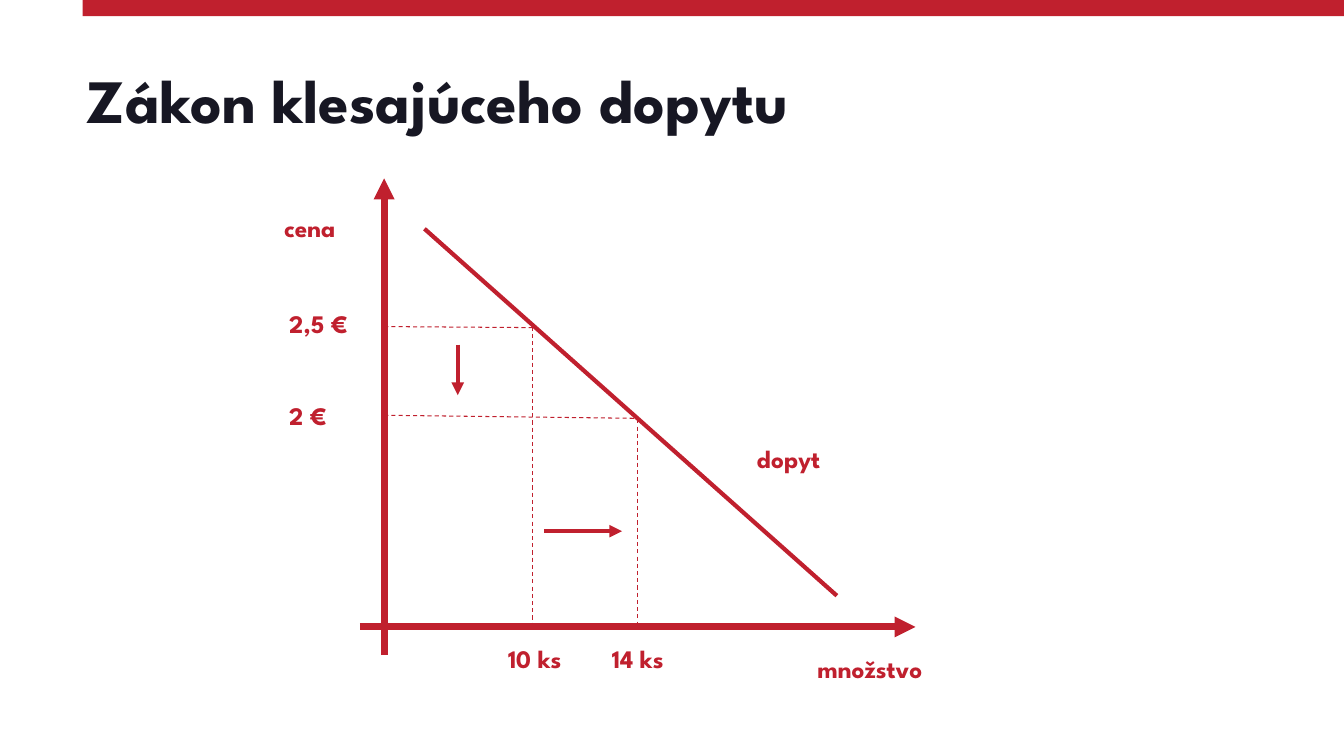
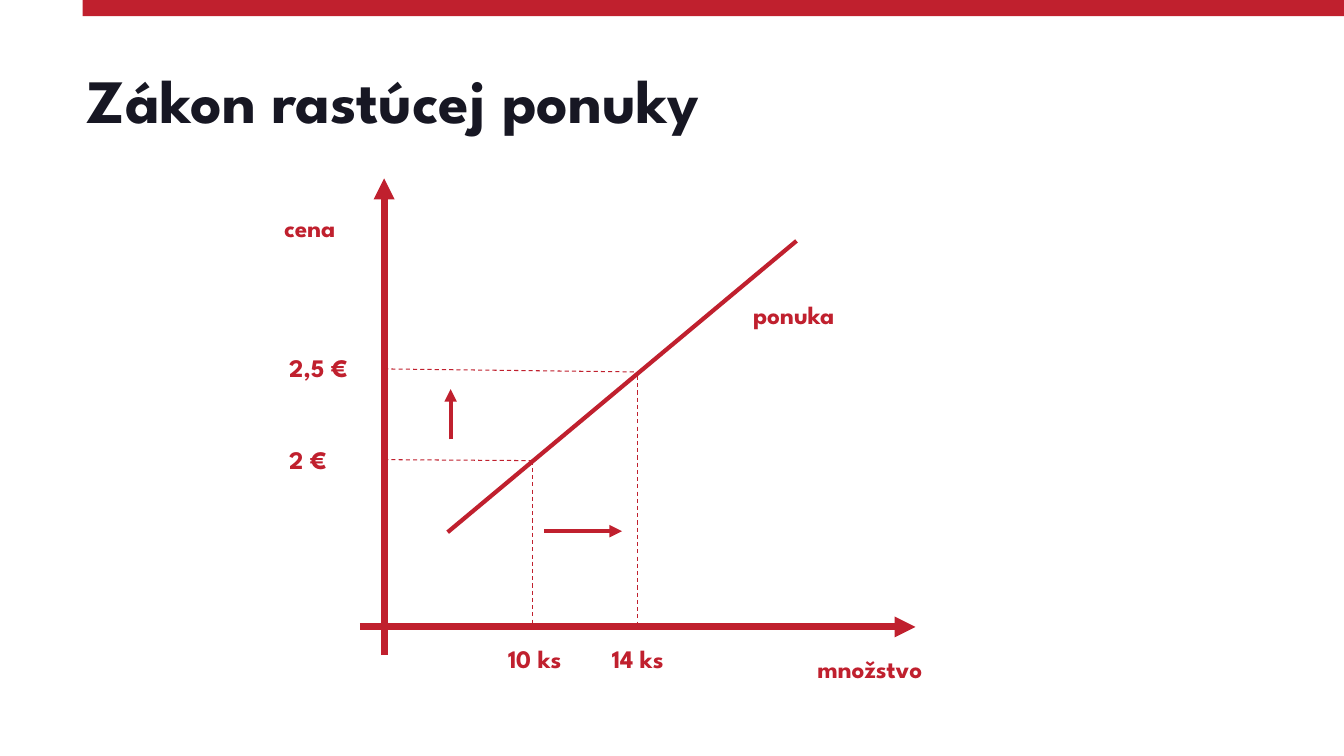
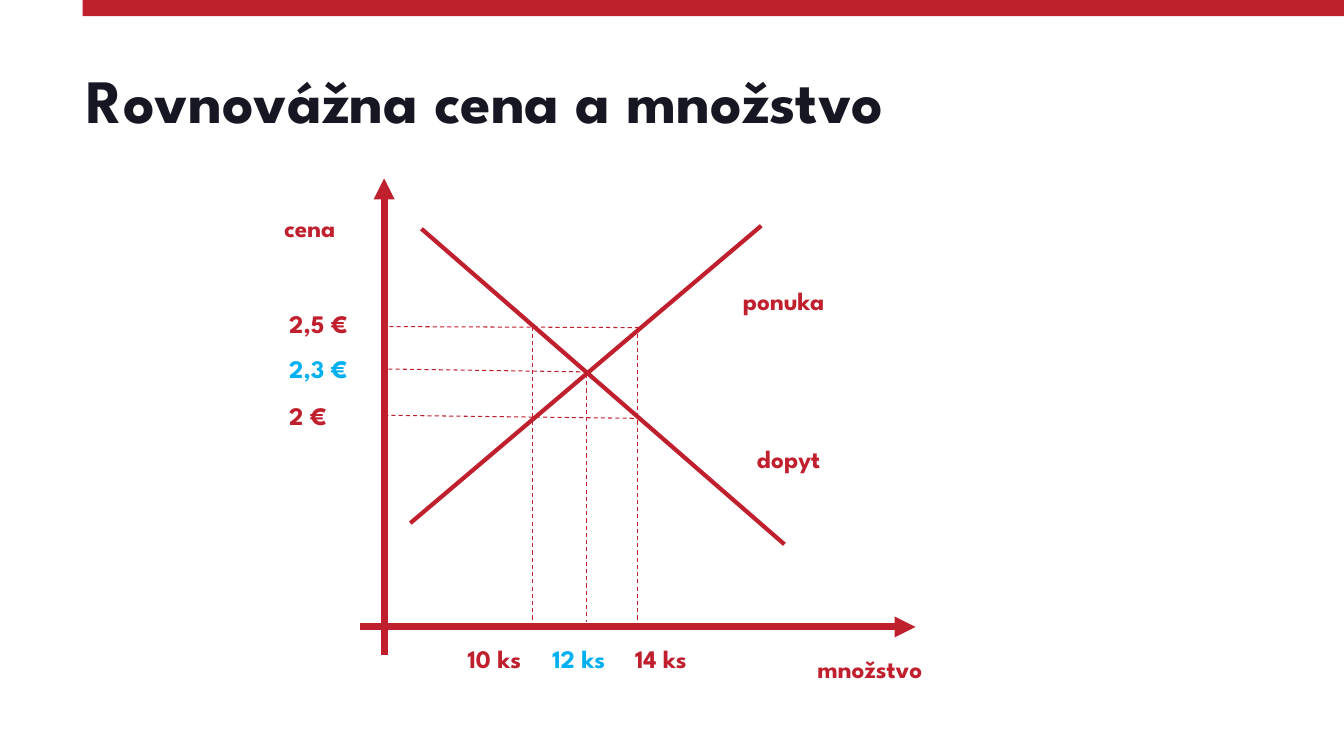
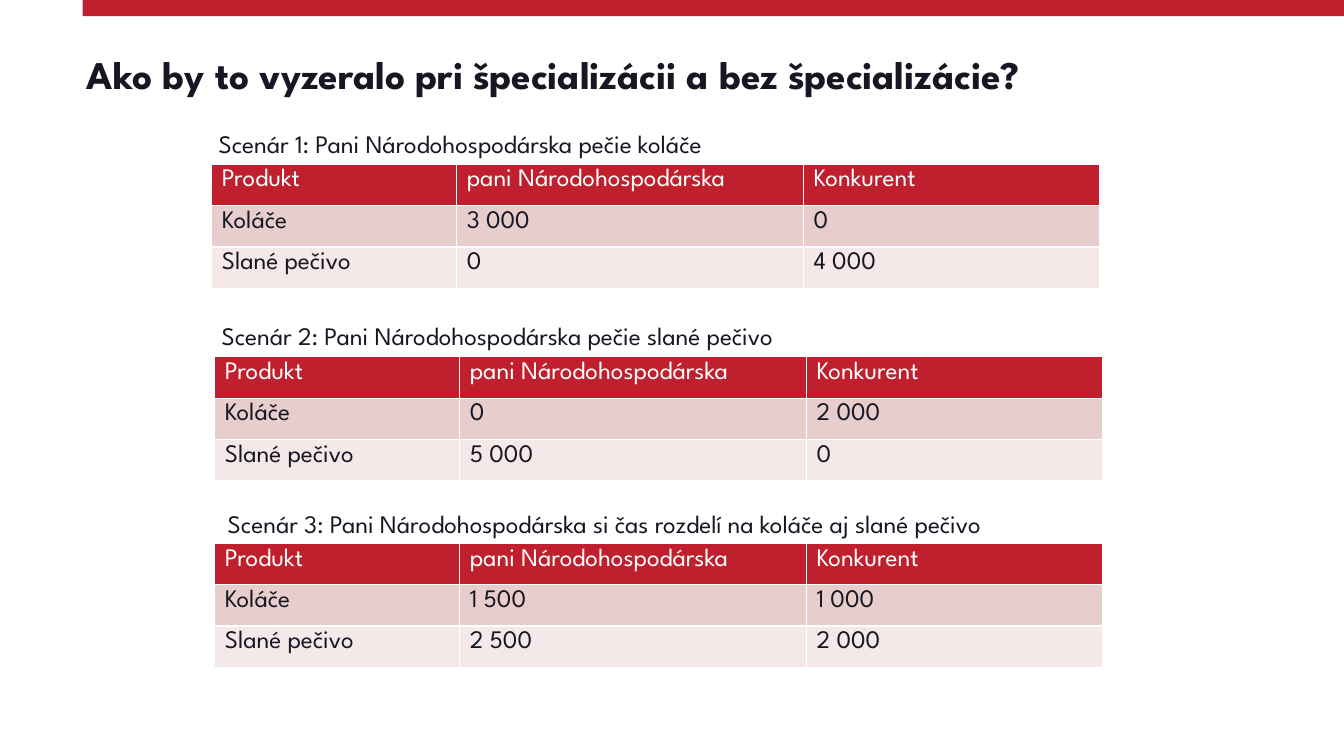
import pptx
import pptx.util
import pptx.dml.color
import pptx.enum.dml
import pptx.enum.shapes
import pptx.enum.text
import pptx.oxml.ns
import lxml.etree

PX = 9144
FONT = "League Spartan"
RED, INK, BLUE, WHITE = "C0202E", "171723", "00B0F0", "FFFFFF"
ROW_FILLS = [RED, "E8CDCD", "F4E8E8"]
color = pptx.dml.color.RGBColor.from_string
qn = pptx.oxml.ns.qn


def write(tf, text, size, ink, bold):
    tf.text = text
    p = tf.paragraphs[0]
    p.alignment = pptx.enum.text.PP_ALIGN.LEFT
    f = p.runs[0].font
    f.name, f.size, f.bold = FONT, pptx.util.Pt(size), bold
    f.color.rgb = color(ink)


def add_line(s, ends, width, dashed=False, arrow=False):
    straight = pptx.enum.shapes.MSO_CONNECTOR.STRAIGHT
    cx = s.shapes.add_connector(straight, *[v * PX for v in ends])
    cx.line.color.rgb = color(RED)
    cx.line.width = pptx.util.Pt(width)
    if dashed:
        cx.line.dash_style = pptx.enum.dml.MSO_LINE.DASH
    sp_pr = cx.element.spPr
    if arrow:
        lxml.etree.SubElement(sp_pr.find(qn("a:ln")), qn("a:tailEnd"), type="triangle")
    lxml.etree.SubElement(sp_pr, qn("a:effectLst"))


prs = pptx.Presentation()
prs.slide_width, prs.slide_height = 1333 * PX, 750 * PX
layout = prs.slide_layouts.get_by_name("Title Only")

titles = [
    ("Zákon klesajúceho dopytu", 44, 145),
    ("Zákon rastúcej ponuky", 44, 145),
    ("Rovnovážna cena a množstvo", 44, 145),
    ("Ako by to vyzeralo pri špecializácii a bez špecializácie?", 28, 92),
]
slides = []
for title, size, height in titles:
    s = prs.slides.add_slide(layout)
    sp = s.shapes.title
    sp.left, sp.top, sp.width, sp.height = 76 * PX, 30 * PX, 1150 * PX, height * PX
    tf = sp.text_frame
    write(tf, title, size, INK, True)
    tf.paragraphs[0].line_spacing = 0.9
    tf.vertical_anchor = pptx.enum.text.MSO_ANCHOR.MIDDLE
    tf.auto_size = pptx.enum.text.MSO_AUTO_SIZE.NONE
    slides.append(s)

band = slides[0].shapes.add_shape(
    pptx.enum.shapes.MSO_SHAPE.RECTANGLE, 82 * PX, 0, 1251 * PX, 16 * PX)
band.shadow.inherit = False
band.fill.solid()
band.fill.fore_color.rgb = color(RED)
band.line.fill.background()
layout.shapes.element.insert(2, band.element)

axes = [(357, 622, 908, 622), (381, 650, 381, 177)]
axis_labels = [("cena", 272, 206, 89, RED), ("množstvo", 801, 643, 136, RED)]
graphs = [
    {
        "curves": [(421, 227, 830, 591)],
        "guides": [(381, 324, 528, 325), (528, 324, 528, 622),
                   (632, 416, 632, 620), (381, 412, 631, 415)],
        "arrows": [(454, 342, 454, 392), (540, 527, 617, 527)],
        "labels": [("dopyt", 741, 435, 107, RED),
                   ("2,5 €", 277, 301, 89, RED), ("2 €", 277, 392, 89, RED),
                   ("10 ks", 494, 633, 89, RED), ("14 ks", 597, 633, 89, RED)],
    },
    {
        "curves": [(790, 239, 444, 528)],
        "guides": [(381, 456, 528, 457), (528, 457, 528, 619),
                   (632, 373, 632, 619), (381, 366, 631, 369)],
        "arrows": [(447, 436, 447, 386), (540, 527, 617, 527)],
        "labels": [("ponuka", 737, 292, 129, RED),
                   ("2,5 €", 277, 345, 89, RED), ("2 €", 277, 436, 89, RED),
                   ("10 ks", 494, 633, 89, RED), ("14 ks", 597, 633, 89, RED)],
    },
    {
        "curves": [(418, 227, 778, 540), (755, 224, 407, 519)],
        "guides": [(379, 324, 632, 325), (528, 324, 528, 622),
                   (632, 324, 632, 622), (381, 412, 631, 415),
                   (378, 366, 584, 369), (582, 371, 582, 617)],
        "arrows": [],
        "labels": [("dopyt", 741, 435, 107, RED), ("ponuka", 727, 278, 118, RED),
                   ("2,5 €", 277, 301, 89, RED), ("2,3 €", 277, 346, 89, BLUE),
                   ("2 €", 277, 392, 89, RED), ("10 ks", 454, 633, 89, RED),
                   ("12 ks", 538, 633, 89, BLUE), ("14 ks", 620, 633, 89, RED)],
    },
]
captions = [
    ("Scenár 1: Pani Národohospodárska pečie koláče", 207, 122, 716, INK),
    ("Scenár 2: Pani Národohospodárska pečie slané pečivo", 210, 313, 716, INK),
    ("Scenár 3: Pani Národohospodárska si čas rozdelí na koláče aj slané pečivo",
     216, 499, 928, INK),
]

for s, graph in zip(slides, graphs):
    for ends in axes:
        add_line(s, ends, 5, arrow=True)
    for ends in graph["curves"]:
        add_line(s, ends, 3)
    for ends in graph["guides"]:
        add_line(s, ends, 0.75, dashed=True)
    for ends in graph["arrows"]:
        add_line(s, ends, 3, arrow=True)

label_sets = [axis_labels + graph["labels"] for graph in graphs] + [captions]
for s, labels in zip(slides, label_sets):
    for text, x, y, w, ink in labels:
        tf = s.shapes.add_textbox(x * PX, y * PX, w * PX, 40 * PX).text_frame
        tf.word_wrap = True
        write(tf, text, 18, ink, labels is not captions)

header = ["Produkt", "pani Národohospodárska", "Konkurent"]
scenarios = [
    (210, 163, ["3 000", "0"], ["0", "4 000"]),
    (213, 354, ["0", "2 000"], ["5 000", "0"]),
    (213, 539, ["1 500", "1 000"], ["2 500", "2 000"]),
]
col_widths = [243, 344, 294]
row_height = 41
for x, y, cakes, savoury in scenarios:
    rows = [header, ["Koláče"] + cakes, ["Slané pečivo"] + savoury]
    table = slides[3].shapes.add_table(
        len(rows), len(header), x * PX, y * PX,
        sum(col_widths) * PX, row_height * len(rows) * PX).table
    for col, width in zip(table.columns, col_widths):
        col.width = width * PX
    for i, row in enumerate(rows):
        for j, text in enumerate(row):
            cell = table.cell(i, j)
            cell.fill.solid()
            cell.fill.fore_color.rgb = color(ROW_FILLS[i])
            write(cell.text_frame, text, 18, INK if i else WHITE, False)

prs.save("out.pptx")
